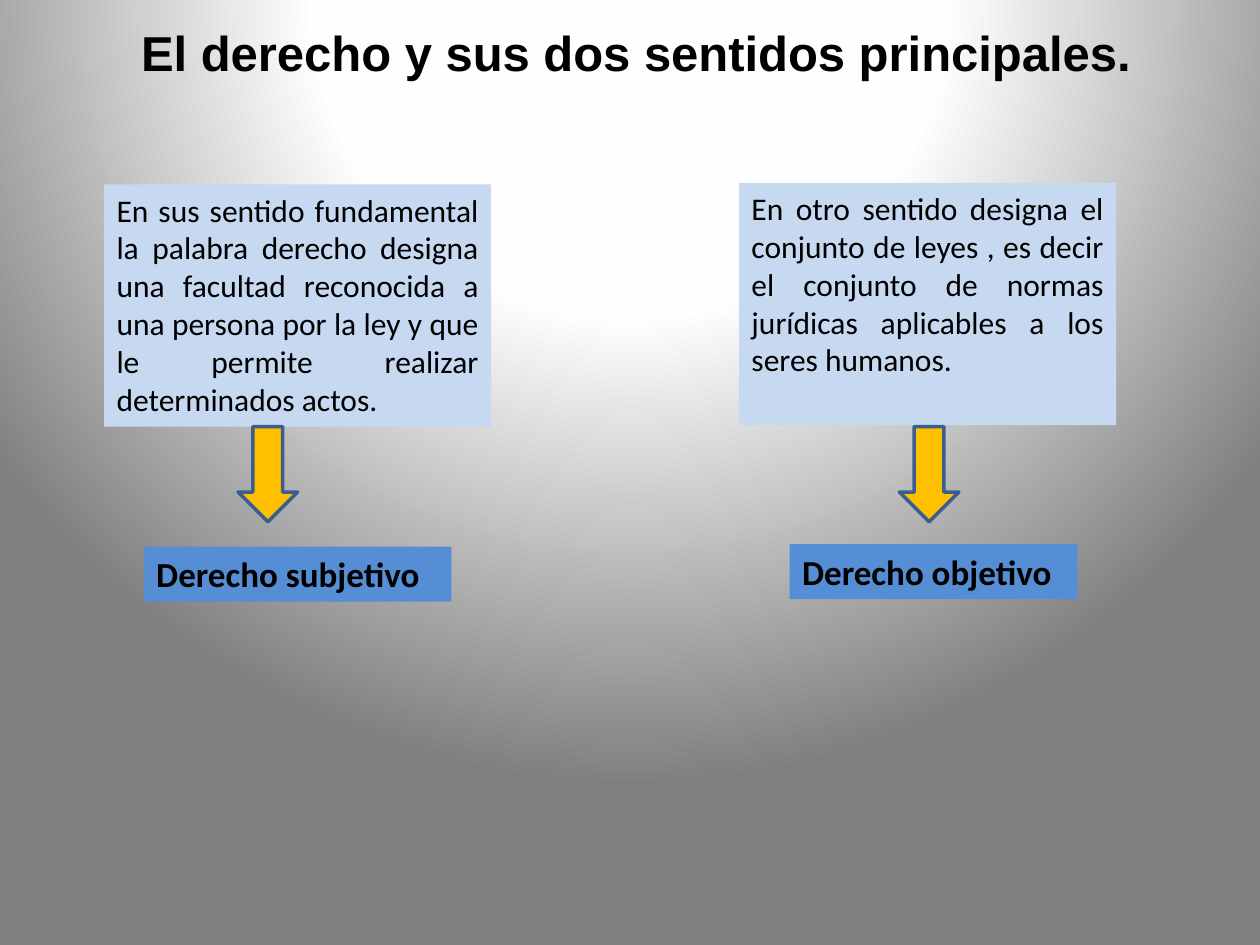
from pptx import Presentation
from pptx.dml.color import RGBColor
from pptx.enum.shapes import MSO_SHAPE as Shape
from pptx.enum.text import MSO_ANCHOR as Anchor, PP_ALIGN as Align
from pptx.oxml import parse_xml
from pptx.oxml.ns import nsdecls
from pptx.util import Cm, Pt

COLORS = {"text": "000000", "meaning": "C6D9F1", "arrow": "FFC000",
          "outline": "3A5F8C", "term": "558ED5"}
BACKDROP = [(0, "FFFFFF"), (40, "FEFEFE"), (100, "7F7F7F")]


def write(shape, text, font, size, bold, align):
    frame = shape.text_frame
    frame.text = text
    frame.word_wrap = True
    frame.vertical_anchor = Anchor.TOP
    paragraph = frame.paragraphs[0]
    paragraph.alignment = align
    for run in paragraph.runs:
        run.font.name = font
        run.font.size = Pt(size)
        run.font.bold = bold
        run.font.color.rgb = RGBColor.from_string(COLORS["text"])


def add_filled(kind, place, color):
    shape = slide.shapes.add_shape(kind, *[Cm(length) for length in place])
    shape.shadow.inherit = False
    shape.fill.solid()
    shape.fill.fore_color.rgb = RGBColor.from_string(COLORS[color])
    shape.line.fill.background()
    return shape


prs = Presentation()
prs.slide_width, prs.slide_height = Cm(25.4), Cm(19.05)
slide = prs.slides.add_slide(prs.slide_layouts[5])

stops = "".join(f'<a:gs pos="{pos * 1000}"><a:srgbClr val="{color}"/></a:gs>'
                for pos, color in BACKDROP)
slide._element.cSld.insert(0, parse_xml(
    f'<p:bg {nsdecls("p", "a")}><p:bgPr><a:gradFill rotWithShape="1">'
    f'<a:gsLst>{stops}</a:gsLst><a:path path="circle">'
    '<a:fillToRect l="50000" t="-80000" r="50000" b="180000"/></a:path>'
    '</a:gradFill><a:effectLst/></p:bgPr></p:bg>'))

title = slide.shapes.title
title.left, title.top, title.width, title.height = Cm(1.12), Cm(0.33), Cm(23.4), Cm(2.64)
write(title, "El derecho y sus dos sentidos principales.", "Arial", 28, True, Align.CENTER)

senses = [
    ("En sus sentido fundamental la palabra derecho designa una facultad "
     "reconocida a una persona por la ley y que le permite realizar "
     "determinados actos.", (2.1, 3.72, 7.8, 4.88),
     (4.8, 8.6, 1.2, 1.92),
     "Derecho subjetivo", (2.9, 11.02, 6.2, 1.11)),
    ("En otro sentido designa el conjunto de leyes , es decir el conjunto de "
     "normas jurídicas aplicables a los seres humanos.", (14.9, 3.69, 7.6, 4.88),
     (18.13, 8.6, 1.2, 1.92),
     "Derecho objetivo", (15.92, 10.97, 5.8, 1.11)),
]
for meaning, meaning_place, arrow_place, term, term_place in senses:
    meaning_box = add_filled(Shape.RECTANGLE, meaning_place, "meaning")
    write(meaning_box, meaning, "Calibri", 18, False, Align.JUSTIFY)

    arrow = add_filled(Shape.DOWN_ARROW, arrow_place, "arrow")
    arrow.line.color.rgb = RGBColor.from_string(COLORS["outline"])
    arrow.line.width = Pt(2)

    term_box = add_filled(Shape.RECTANGLE, term_place, "term")
    write(term_box, term, "Calibri", 20, True, Align.LEFT)

prs.save("out.pptx")
